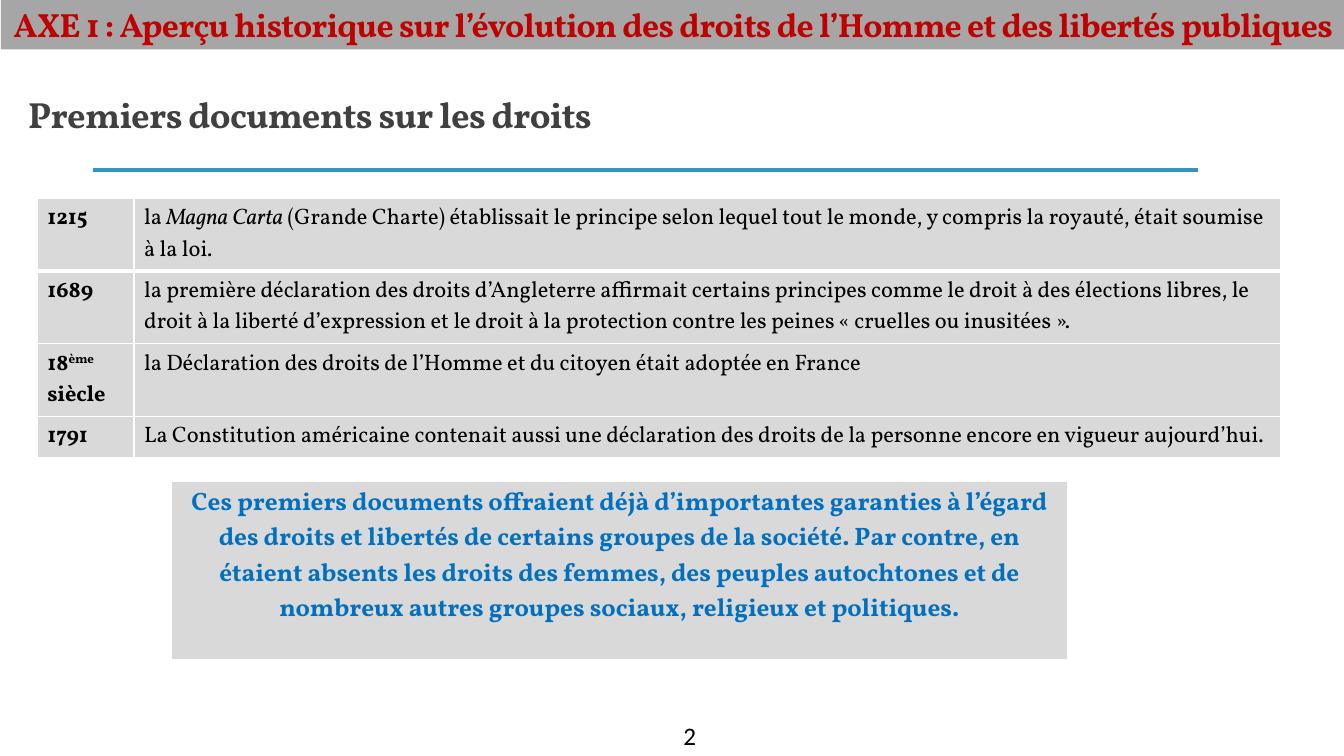
from dataclasses import dataclass

from lxml.etree import SubElement
from pptx import Presentation
from pptx.dml.color import RGBColor
from pptx.enum.shapes import MSO_CONNECTOR as Link, MSO_SHAPE as Form
from pptx.enum.text import MSO_ANCHOR as Anchor, PP_ALIGN as Align
from pptx.oxml.ns import qn
from pptx.util import Inches, Pt

RED = RGBColor(0xC0, 0x00, 0x00)
BLUE = RGBColor(0x00, 0x70, 0xC0)
TEAL = RGBColor(0x34, 0x94, 0xBA)
BLACK = RGBColor(0x00, 0x00, 0x00)
DARK = RGBColor(0x40, 0x40, 0x40)
GREY = RGBColor(0xA6, 0xA6, 0xA6)
PALE = RGBColor(0xD9, 0xD9, 0xD9)
WHITE = RGBColor(0xFF, 0xFF, 0xFF)


@dataclass
class Part:
    text: str
    slant: bool = False
    lift: int = 0


@dataclass
class Style:
    size: float
    color: RGBColor
    bold: bool = True
    face: str = "Vollkorn"
    align: Align = Align.LEFT
    tight: bool = False


@dataclass
class Entry:
    date: list[Part]
    fact: list[Part]
    height: float


HEAD = Style(24, RED, align=Align.CENTER, tight=True)
TOPIC = Style(26, DARK, tight=True)
DATE = Style(16, BLACK)
FACT = Style(16, BLACK, bold=False)
NOTE = Style(18, BLUE, align=Align.CENTER)
PAGE = Style(18, BLACK, bold=False, face="Calibri")

ENTRIES = [
    Entry([Part("1215")],
          [Part("la "), Part("Magna Carta", slant=True),
           Part(" (Grande Charte) établissait le principe selon lequel tout le monde, "
                "y compris la royauté, était soumise à la loi.")], 0.72),
    Entry([Part("1689")],
          [Part("la première déclaration des droits d’Angleterre affirmait certains "
                "principes comme le droit à des élections libres, le droit à la liberté "
                "d’expression et le droit à la protection contre les peines "
                "« cruelles ou inusitées ».")], 0.72),
    Entry([Part("18"), Part("ème", lift=30), Part(" siècle")],
          [Part("la Déclaration des droits de l’Homme et du citoyen était adoptée "
                "en France")], 0.72),
    Entry([Part("1791")],
          [Part("La Constitution américaine contenait aussi une déclaration des droits "
                "de la personne encore en vigueur aujourd’hui.")], 0.41),
]
CLOSE = ("Ces premiers documents offraient déjà d’importantes garanties à l’égard des "
         "droits et libertés de certains groupes de la société. Par contre, en étaient "
         "absents les droits des femmes, des peuples autochtones et de nombreux autres "
         "groupes sociaux, religieux et politiques.")


def write(frame, parts: list[Part], style: Style) -> None:
    frame.word_wrap = True
    para = frame.paragraphs[0]
    para.alignment = style.align
    if style.tight:
        para.line_spacing = 0.85
        frame.vertical_anchor = Anchor.BOTTOM
    font = para.font
    font.name, font.size, font.bold = style.face, Pt(style.size), style.bold
    font.color.rgb = style.color
    for part in parts:
        run = para.add_run()
        run.text = part.text
        if part.slant:
            run.font.italic = True
        props = run._r.get_or_add_rPr()
        if part.lift:
            props.set("baseline", str(part.lift * 1000))
        if style.tight:
            props.set("spc", "-50")


def edge(cell, side: str, width: float) -> None:
    line = SubElement(cell._tc.get_or_add_tcPr(), qn(f"a:ln{side}"), w=str(Pt(width)))
    fill = SubElement(line, qn("a:solidFill"))
    SubElement(fill, qn("a:srgbClr"), val=str(WHITE))


def grid(slide, left: float, top: float, cols: list[float], rows: list[float]):
    table = slide.shapes.add_table(
        len(rows), len(cols), Inches(left), Inches(top),
        Inches(sum(cols)), Inches(sum(rows))).table
    table.first_row = table.horz_banding = False
    for col, width in zip(table.columns, cols):
        col.width = Inches(width)
    for num, (row, height) in enumerate(zip(table.rows, rows)):
        row.height = Inches(height)
        for cell in row.cells:
            edge(cell, "L", 1)
            edge(cell, "R", 1)
            edge(cell, "T", 3 if num == 1 else 1)
            edge(cell, "B", 3 if num == 0 else 1)
            cell.fill.solid()
            cell.fill.fore_color.rgb = PALE
    return table


def label(slide, box: tuple[float, ...], text: str, style: Style) -> None:
    shape = slide.shapes.add_textbox(*map(Inches, box))
    write(shape.text_frame, [Part(text)], style)


def banner(slide, text: str) -> None:
    shape = slide.shapes.add_shape(
        Form.RECTANGLE, *map(Inches, (0.01, 0, 13.33, 0.49)))
    shape.shadow.inherit = False
    shape.fill.solid()
    shape.fill.fore_color.rgb = GREY
    shape.line.fill.background()
    frame = shape.text_frame
    frame.margin_left = frame.margin_right = 0
    write(frame, [Part(text)], HEAD)


def rule(slide) -> None:
    line = slide.shapes.add_connector(
        Link.STRAIGHT, *map(Inches, (0.92, 1.69, 11.88, 1.69)))
    line.line.color.rgb = TEAL
    line.line.width = Pt(3)
    SubElement(line._element.spPr, qn("a:effectLst"))


def main() -> None:
    deck = Presentation()
    deck.slide_width, deck.slide_height = Inches(13.33), Inches(7.5)
    slide = deck.slides.add_slide(deck.slide_layouts[6])
    banner(slide, "AXE 1 : Aperçu historique sur l’évolution des droits de l’Homme "
                  "et des libertés publiques")
    rule(slide)
    label(slide, (6.68, 7.1, 1.25, 0.4), "2", PAGE)
    label(slide, (0.18, 0.68, 12.84, 0.72), "Premiers documents sur les droits", TOPIC)
    dates = grid(slide, 0.37, 1.97, [0.96, 11.37], [item.height for item in ENTRIES])
    for row, item in zip(dates.rows, ENTRIES):
        write(row.cells[0].text_frame, item.date, DATE)
        write(row.cells[1].text_frame, item.fact, FACT)
    note = grid(slide, 1.7, 4.78, [8.89], [1.78])
    write(note.cell(0, 0).text_frame, [Part(CLOSE)], NOTE)
    deck.save("out.pptx")


if __name__ == "__main__":
    main()
